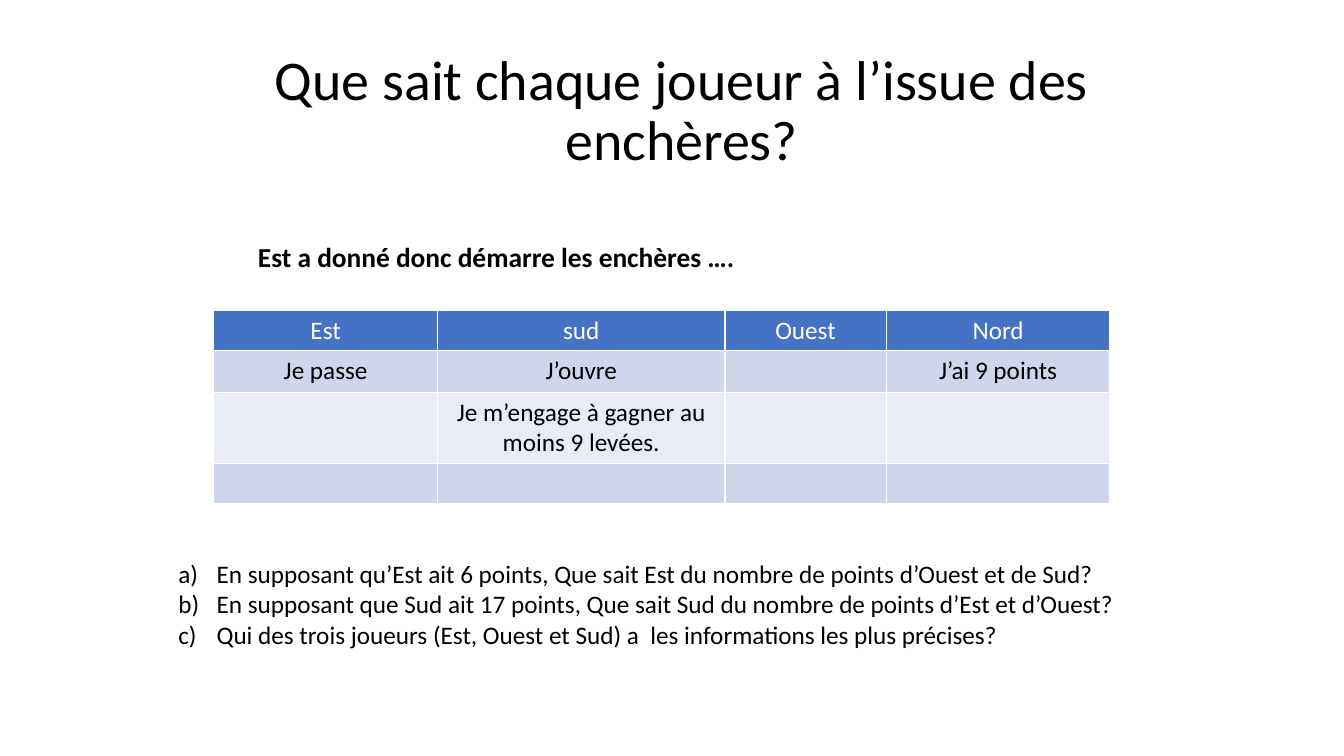
import pptx
import pptx.util
import pptx.dml.color
import pptx.enum.text
import pptx.oxml
import pptx.oxml.ns
from pptx.util import Inches

COLORS = {"text": "000000", "white": "FFFFFF", "header": "4472C4",
          "band_dark": "CFD5EA", "band_light": "E9EBF5"}
CENTER = pptx.enum.text.PP_ALIGN.CENTER
MIDDLE = pptx.enum.text.MSO_ANCHOR.MIDDLE
NAMESPACE = pptx.oxml.ns.nsdecls("a")


def write(para, text, size, color="text", bold=False):
    """Format the paragraph and add the text, if any, as one run."""
    para.font.size = pptx.util.Pt(size)
    if text:
        span = para.add_run()
        span.text = text
        span.font.name = "Calibri"
        span.font.size = pptx.util.Pt(size)
        span.font.bold = bold
        span.font.color.rgb = pptx.dml.color.RGBColor.from_string(COLORS[color])


def add_borders(cell):
    """Draw a thin white line on each side of the cell."""
    properties = cell._tc.get_or_add_tcPr()
    for position, side in enumerate(("lnL", "lnR", "lnT", "lnB")):
        properties.insert(position, pptx.oxml.parse_xml(
            f'<a:{side} {NAMESPACE} w="12700"><a:solidFill>'
            f'<a:srgbClr val="{COLORS["white"]}"/></a:solidFill></a:{side}>'))


deck = pptx.Presentation()
deck.slide_width, deck.slide_height = Inches(13.33), Inches(7.5)
page = deck.slides.add_slide(deck.slide_layouts[5])

# Title
title = page.shapes.title
title.left, title.top = Inches(2.26), Inches(0.29)
title.width, title.height = Inches(9), Inches(1.65)
title.text_frame.word_wrap = True
title.text_frame.vertical_anchor = MIDDLE
para = title.text_frame.paragraphs[0]
para.alignment = CENTER
para.line_spacing = 0.9
write(para, "Que sait chaque joueur à l’issue des enchères?", 40)

# Introduction
intro = page.shapes.add_textbox(Inches(2.46), Inches(2.33), Inches(5.45), Inches(0.45))
intro.text_frame.word_wrap = True
write(intro.text_frame.paragraphs[0],
      "Est a donné donc démarre les enchères ….", 19.6, bold=True)

# Bidding table
bids = [
    ["Est", "sud", "Ouest", "Nord"],
    ["Je passe", "J’ouvre", "", "J’ai 9 points"],
    ["", "Je m’engage à gagner au moins 9 levées.", "", ""],
    ["", "", "", ""],
]
fills = ["header", "band_dark", "band_light", "band_dark"]
table = page.shapes.add_table(4, 4, Inches(2.12), Inches(3.08),
                              Inches(8.89), Inches(1.92)).table
table.first_row = table.horz_banding = False
for column, width in zip(table.columns, (2.22, 2.85, 1.6, 2.22)):
    column.width = Inches(width)
for row, height in zip(table.rows, (0.4, 0.41, 0.71, 0.4)):
    row.height = Inches(height)
for row, texts, fill in zip(table.rows, bids, fills):
    for cell, text in zip(row.cells, texts):
        cell.fill.solid()
        cell.fill.fore_color.rgb = pptx.dml.color.RGBColor.from_string(COLORS[fill])
        add_borders(cell)
        para = cell.text_frame.paragraphs[0]
        para.alignment = CENTER
        write(para, text, 18, "white" if fill == "header" else "text")

# Questions
questions = [
    "En supposant qu’Est ait 6 points, Que sait Est du nombre de points d’Ouest et de Sud?",
    "En supposant que Sud ait 17 points, Que sait Sud du nombre de points d’Est et d’Ouest?",
    "Qui des trois joueurs (Est, Ouest et Sud) a  les informations les plus précises?",
]
frame = page.shapes.add_textbox(Inches(1.67), Inches(5.49),
                                Inches(9.77), Inches(1.01)).text_frame
frame.word_wrap = True
for index, question in enumerate(questions):
    para = frame.add_paragraph() if index else frame.paragraphs[0]
    properties = para._p.get_or_add_pPr()
    properties.set("marL", str(Inches(0.38)))
    properties.set("indent", str(Inches(-0.38)))
    properties.append(pptx.oxml.parse_xml(
        f'<a:buAutoNum {NAMESPACE} type="alphaLcParenR"/>'))
    write(para, question, 18)

deck.save("out.pptx")
